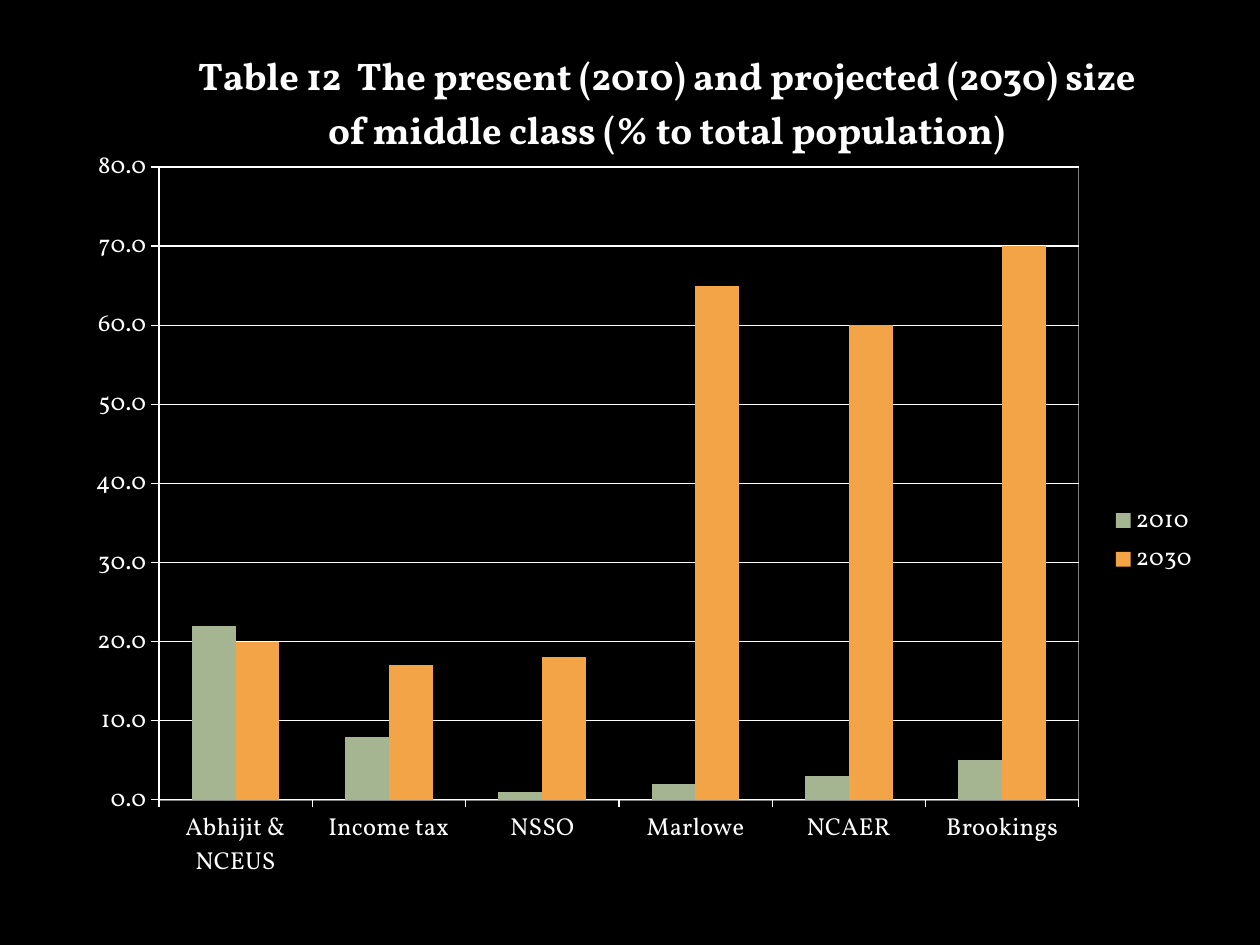
"""Build a slide with a column chart of middle class size."""
from dataclasses import dataclass

from lxml import etree
from pptx import Presentation
from pptx.chart.chart import Chart
from pptx.chart.data import CategoryChartData
from pptx.dml.color import RGBColor
from pptx.enum.chart import XL_CHART_TYPE, XL_LEGEND_POSITION, XL_TICK_MARK
from pptx.oxml import parse_xml
from pptx.oxml.ns import nsdecls, qn
from pptx.util import Pt

COLUMN = XL_CHART_TYPE.COLUMN_CLUSTERED
RIGHT = XL_LEGEND_POSITION.RIGHT
OUT = XL_TICK_MARK.OUTSIDE
NONE = XL_TICK_MARK.NONE
SCALE = 914400 / 126


@dataclass(frozen=True)
class Theme:
    font: str = "Vollkorn"
    back: str = "000000"
    ink: str = "FFFFFF"
    edge: str = "808080"
    base: int = 10
    label: int = 14
    title: int = 22
    line: float = 0.75


@dataclass(frozen=True)
class Series:
    name: str
    color: str
    values: tuple[int, ...]


@dataclass(frozen=True)
class Box:
    left: int
    top: int
    width: int
    height: int


THEME = Theme()
SLIDE = Box(0, 0, 1260, 945)
FRAME = Box(33, 39, 1194, 867)
PLOT = Box(159, 167, 920, 633)
KEY = Box(1104, 499, 100, 82)
HEAD = Box(191, 42, 0, 0)
TITLE = ("Table 12  The present (2010) and projected (2030) size "
         "of middle class (% to total population)")
NAMES = ("Abhijit & NCEUS", "Income tax", "NSSO", "Marlowe", "NCAER", "Brookings")
SERIES = (
    Series("2010", "A5B592", (22, 8, 1, 2, 3, 5)),
    Series("2030", "F3A447", (20, 17, 18, 65, 60, 70)),
)


def px(length: int) -> int:
    """Turn px into EMU."""
    return round(length * SCALE)


def rgb(color: str) -> RGBColor:
    """Turn a hex string into a colour."""
    return RGBColor.from_string(color)


def place(node: etree.ElementBase, index: int, box: Box, inner: bool = False) -> None:
    """Give a chart part a fixed place within the frame."""
    for old in node.findall(qn("c:layout")):
        node.remove(old)
    parts = [("layoutTarget", "inner")] if inner else []
    parts += [("xMode", "edge"), ("yMode", "edge"),
              ("x", round((box.left - FRAME.left) / FRAME.width, 4)),
              ("y", round((box.top - FRAME.top) / FRAME.height, 4))]
    if box.width:
        parts += [("w", round(box.width / FRAME.width, 4)),
                  ("h", round(box.height / FRAME.height, 4))]
    body = "".join(f'<c:{tag} val="{value}"/>' for tag, value in parts)
    node.insert(index, parse_xml(
        f'<c:layout {nsdecls("c")}><c:manualLayout>{body}</c:manualLayout></c:layout>'))


def style_line(line, color: str) -> None:
    """Set the colour and width of a line."""
    line.color.rgb = rgb(color)
    line.width = Pt(THEME.line)


def style_axes(chart: Chart) -> None:
    """Style both axes and the grid."""
    for axis in (chart.category_axis, chart.value_axis):
        axis.major_tick_mark = OUT
        axis.minor_tick_mark = NONE
        axis.tick_labels.font.size = Pt(THEME.label)
        style_line(axis.format.line, THEME.ink)
    axis = chart.value_axis
    axis.minimum_scale, axis.maximum_scale, axis.major_unit = 0, 80, 10
    axis.has_major_gridlines = True
    style_line(axis.major_gridlines.format.line, THEME.ink)
    axis.tick_labels.number_format = "0.0"
    axis.tick_labels.number_format_is_linked = False


def style_bars(chart: Chart) -> None:
    """Set the gap and fill of the columns."""
    plot = chart.plots[0]
    plot.gap_width = 150
    plot.vary_by_categories = False
    for bars, item in zip(plot.series, SERIES):
        bars.format.fill.solid()
        bars.format.fill.fore_color.rgb = rgb(item.color)
        bars.invert_if_negative = False


def add_title(chart: Chart) -> None:
    """Write the title above the plot."""
    frame = chart.chart_title.text_frame
    frame.text = TITLE
    font = frame.paragraphs[0].runs[0].font
    font.name, font.size, font.bold = THEME.font, Pt(THEME.title), True
    font.color.rgb = rgb(THEME.ink)
    node = chart._chartSpace.xpath(".//c:title")[0]
    place(node, 1, HEAD)
    node.find(qn("c:overlay")).set("val", "1")


def add_key(chart: Chart) -> None:
    """Show the legend at the right."""
    chart.has_legend = True
    chart.legend.position = RIGHT
    chart.legend.include_in_layout = False
    chart.legend.font.size = Pt(THEME.label)
    place(chart._chartSpace.xpath(".//c:legend")[0], 1, KEY)


def frame_plot(chart: Chart) -> None:
    """Place the plot and draw its border."""
    area = chart._chartSpace.xpath(".//c:plotArea")[0]
    place(area, 0, PLOT, inner=True)
    area.append(parse_xml(
        f'<c:spPr {nsdecls("c", "a")}><a:noFill/><a:ln w="{Pt(THEME.line)}"><a:solidFill>'
        f'<a:srgbClr val="{THEME.edge}"/></a:solidFill></a:ln></c:spPr>'))


def main() -> None:
    """Build and save the slide."""
    deck = Presentation()
    deck.slide_width, deck.slide_height = px(SLIDE.width), px(SLIDE.height)
    slide = deck.slides.add_slide(deck.slide_layouts[6])
    slide.background.fill.solid()
    slide.background.fill.fore_color.rgb = rgb(THEME.back)
    data = CategoryChartData(number_format="0.0")
    data.categories = NAMES
    for item in SERIES:
        data.add_series(item.name, item.values)
    chart = slide.shapes.add_chart(
        COLUMN, px(FRAME.left), px(FRAME.top), px(FRAME.width), px(FRAME.height), data).chart
    chart.font.name, chart.font.size = THEME.font, Pt(THEME.base)
    chart.font.color.rgb = rgb(THEME.ink)
    style_axes(chart)
    style_bars(chart)
    add_title(chart)
    add_key(chart)
    frame_plot(chart)
    deck.save("out.pptx")


if __name__ == "__main__":
    main()
